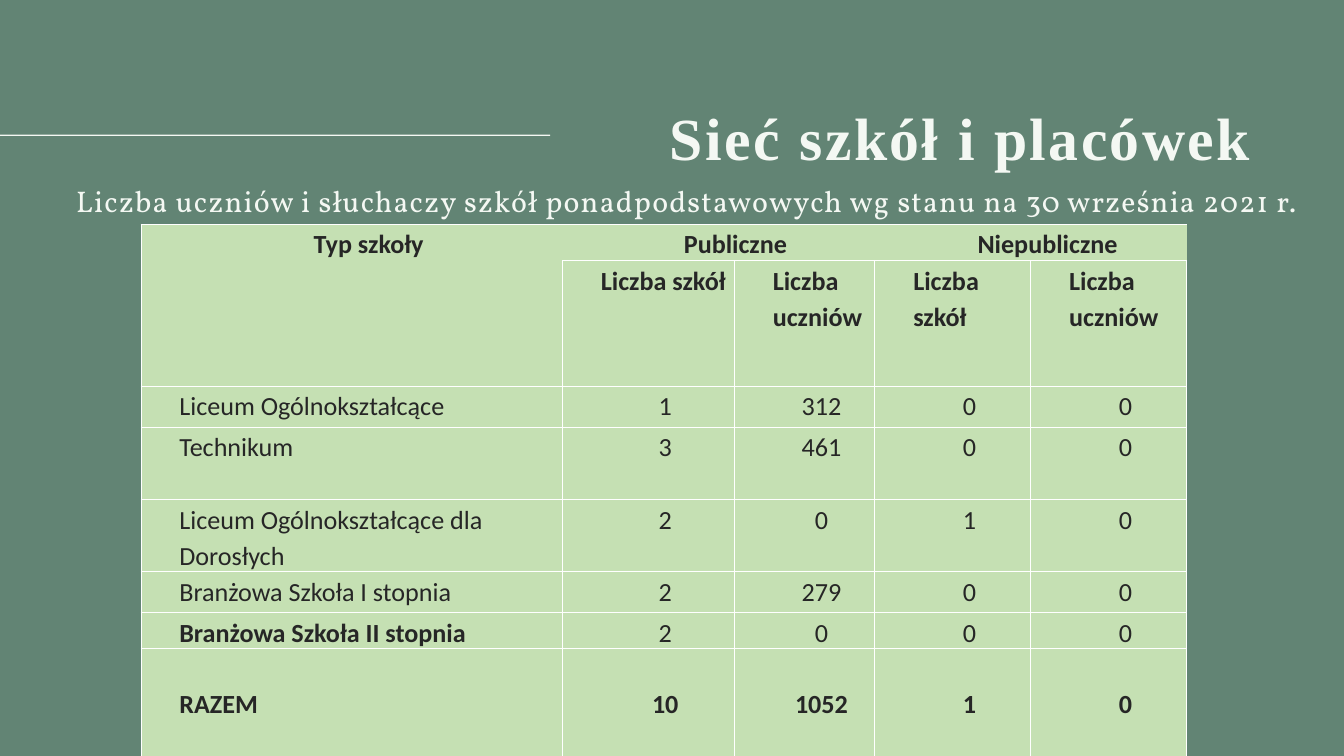
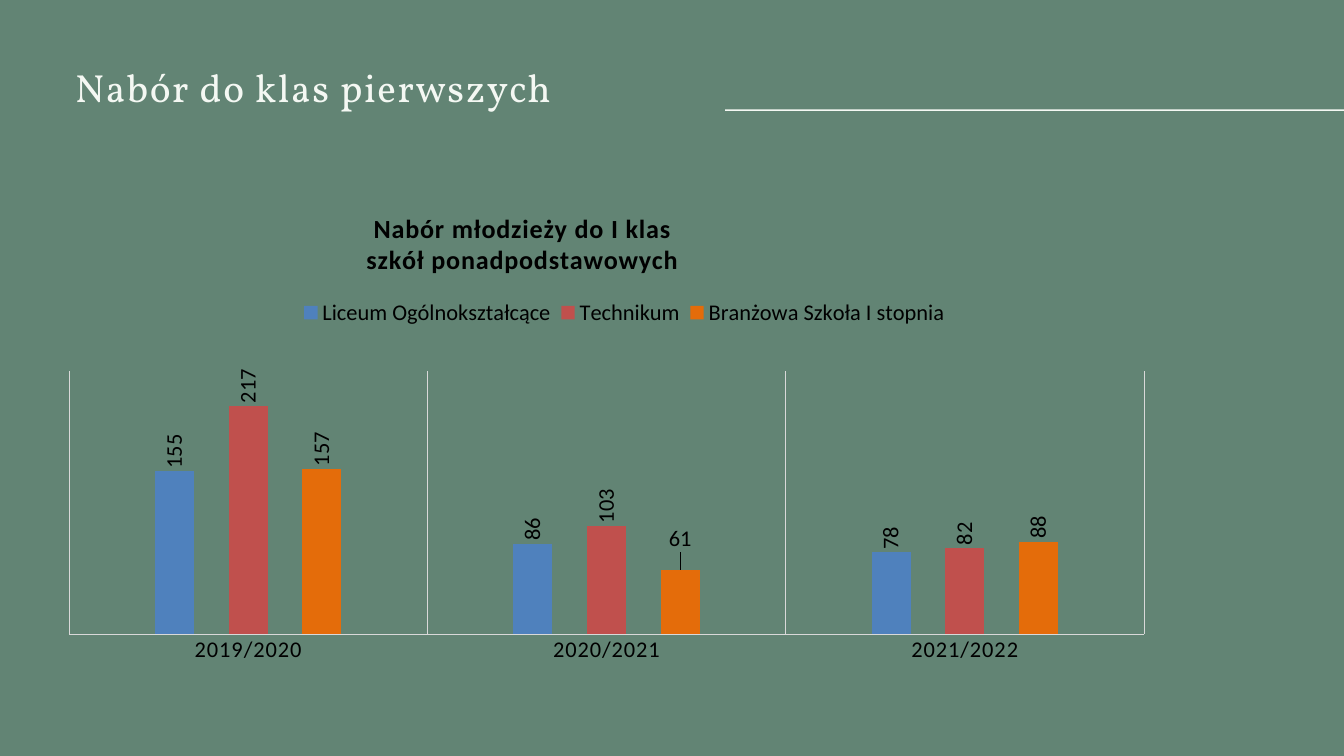
from lxml.etree import SubElement
from pptx import Presentation
from pptx.chart.data import CategoryChartData
from pptx.dml.color import RGBColor
from pptx.enum.chart import XL_CHART_TYPE, XL_LABEL_POSITION, XL_LEGEND_POSITION, XL_TICK_MARK
from pptx.enum.shapes import MSO_SHAPE
from pptx.enum.text import MSO_ANCHOR, MSO_AUTO_SIZE, PP_ALIGN
from pptx.oxml.ns import qn
from pptx.util import Cm, Pt

GREEN = RGBColor(0x62, 0x84, 0x74)
CREAM = RGBColor(0xF4, 0xF8, 0xF3)
LIME = RGBColor(0xC5, 0xE0, 0xB3)
INK = RGBColor(0x26, 0x26, 0x26)
WHITE = RGBColor(0xFF, 0xFF, 0xFF)
BLACK = RGBColor(0, 0, 0)
GREY = RGBColor(0xD9, 0xD9, 0xD9)
BLUE = RGBColor(0x4F, 0x81, 0xBD)
RED = RGBColor(0xC0, 0x50, 0x4D)
ORANGE = RGBColor(0xE4, 0x6C, 0x0A)

SERIF, SANS, ROMAN = "Vollkorn", "Calibri", "Times New Roman"
WIDTH, HEIGHT = 50.8, 28.58

HEADS = [
    ["Typ szkoły", "Publiczne", "", "Niepubliczne", ""],
    ["", "Liczba szkół", "Liczba uczniów", "Liczba szkół", "Liczba uczniów"],
]
SCHOOLS = [
    ["Liceum Ogólnokształcące", "1", "312", "0", "0"],
    ["Technikum", "3", "461", "0", "0"],
    ["Liceum Ogólnokształcące dla Dorosłych", "2", "0", "1", "0"],
    ["Branżowa Szkoła I stopnia", "2", "279", "0", "0"],
    ["Branżowa Szkoła II stopnia", "2", "0", "0", "0"],
    ["RAZEM", "10", "1052", "1", "0"],
]
COLS = [15.93, 6.5, 5.31, 5.89, 5.89]
ROWS = [1.22, 4.75, 1.55, 2.74, 2.51, 1.55, 1.22, 4.06]
SPANS = [((0, 0), (1, 0)), ((0, 1), (0, 2)), ((0, 3), (0, 4))]

YEARS = ["2019/2020", "2020/2021", "2021/2022"]
INTAKE = [
    ("Liceum Ogólnokształcące", (155, 86, 78), BLUE),
    ("Technikum", (217, 103, 82), RED),
    ("Branżowa Szkoła I stopnia", (157, 61, 88), ORANGE),
]


def write(frame, text, size, font=SANS, color=INK, bold=False, align=PP_ALIGN.LEFT,
          lead=None, track=0, indent=0):
    """Fill a text frame; lead is line spacing, track is letter spacing in points."""
    frame.text = text
    for para in frame.paragraphs:
        para.alignment = align
        if lead:
            para.line_spacing = lead
        if indent:
            props = para._p.get_or_add_pPr()
            props.set("marL", str(Cm(indent)))
            props.set("indent", "0")
        for run in para.runs:
            run.font.name = font
            run.font.size = Pt(size)
            run.font.bold = bold
            run.font.color.rgb = color
            if track:
                run._r.get_or_add_rPr().set("spc", str(round(track * 100)))


def edge(cell, lines):
    """Draw white borders on the named sides (L, R, T, B) and clear the others."""
    props = cell._tc.get_or_add_tcPr()
    for side in "LRTB":
        line = SubElement(props, qn(f"a:ln{side}"), w=str(Pt(1)))
        if side in lines:
            fill = SubElement(line, qn("a:solidFill"))
            SubElement(fill, qn("a:srgbClr"), val=str(WHITE))
        else:
            SubElement(line, qn("a:noFill"))


def place(node, index, fixed=True, inner=False, **spots):
    """Give a chart part a manual layout in fractions of the chart."""
    for old in node.findall(qn("c:layout")):
        node.remove(old)
    layout = node.makeelement(qn("c:layout"))
    node.insert(index, layout)
    manual = SubElement(layout, qn("c:manualLayout"))
    if inner:
        SubElement(manual, qn("c:layoutTarget"), val="inner")
    if fixed:
        for mode in ("xMode", "yMode"):
            SubElement(manual, qn(f"c:{mode}"), val="edge")
    for key, value in spots.items():
        SubElement(manual, qn(f"c:{key}"), val=str(value))


class Deck:
    def __init__(self):
        self.prs = Presentation()
        self.prs.slide_width, self.prs.slide_height = Cm(WIDTH), Cm(HEIGHT)
        back = self.prs.slide_master.background.fill
        back.solid()
        back.fore_color.rgb = GREEN
        self.slide = None

    def start(self):
        self.slide = self.prs.slides.add_slide(self.prs.slide_layouts[5])

    def fit(self, shape, box, right):
        shape.left, shape.top, shape.width, shape.height = map(Cm, box)
        frame = shape.text_frame
        frame.margin_left = frame.margin_top = frame.margin_bottom = 0
        frame.margin_right = Cm(right)
        frame.word_wrap = True
        frame.auto_size = MSO_AUTO_SIZE.SHAPE_TO_FIT_TEXT
        frame.vertical_anchor = MSO_ANCHOR.TOP
        return frame

    def title(self, text, box, size, right=0, **style):
        frame = self.fit(self.slide.shapes.title, box, right)
        write(frame, text, size, color=CREAM, lead=Pt(size * 1.2), **style)

    def label(self, text, box, size, right=0, **style):
        frame = self.fit(self.slide.shapes.add_textbox(*map(Cm, box)), box, right)
        write(frame, text, size, color=CREAM, lead=Pt(size * 1.2), **style)

    def rule(self, left, top, width):
        bar = self.slide.shapes.add_shape(
            MSO_SHAPE.RECTANGLE, Cm(left), Cm(top), Cm(width), Cm(0.05))
        bar.shadow.inherit = False
        bar.fill.solid()
        bar.fill.fore_color.rgb = CREAM
        bar.line.fill.background()

    def table(self, left, top):
        data = HEADS + SCHOOLS
        table = self.slide.shapes.add_table(
            len(data), len(COLS), Cm(left), Cm(top), Cm(sum(COLS)), Cm(sum(ROWS))).table
        table.first_row = table.horz_banding = False
        for col, width in zip(table.columns, COLS):
            col.width = Cm(width)
        for row, height in zip(table.rows, ROWS):
            row.height = Cm(height)
        last = len(data) - 1
        for r, texts in enumerate(data):
            for c, text in enumerate(texts):
                cell = table.cell(r, c)
                lines = "LRTB"
                if r == 0:
                    lines = "TB" + {0: "L", len(COLS) - 1: "R"}.get(c, "")
                edge(cell, lines)
                cell.fill.solid()
                cell.fill.fore_color.rgb = LIME
                cell.margin_left = cell.margin_right = Cm(0.18)
                cell.margin_top = cell.margin_bottom = 0
                cell.vertical_anchor = MSO_ANCHOR.MIDDLE if r == last else MSO_ANCHOR.TOP
                if text:
                    heavy = r < len(HEADS) or r == last or (r == last - 1 and c == 0)
                    mid = r == 0 or (r > 1 and c > 0)
                    write(cell.text_frame, text, 28, bold=heavy, lead=1.15, indent=1.27,
                          align=PP_ALIGN.CENTER if mid else PP_ALIGN.LEFT)
        for first, end in SPANS:
            table.cell(*first).merge(table.cell(*end))

    def chart(self, heading, box):
        data = CategoryChartData()
        data.categories = YEARS
        for name, values, _ in INTAKE:
            data.add_series(name, values)
        chart = self.slide.shapes.add_chart(
            XL_CHART_TYPE.COLUMN_CLUSTERED, *map(Cm, box), data).chart
        self.letter(chart.font)
        root = chart.element

        chart.has_title = True
        write(chart.chart_title.text_frame, heading, 28, color=BLACK, bold=True,
              align=PP_ALIGN.CENTER, track=1)
        place(root.find(".//" + qn("c:title")), 1, x=0.28, y=0.01)

        chart.has_legend = True
        chart.legend.position = XL_LEGEND_POSITION.TOP
        chart.legend.include_in_layout = False
        self.letter(chart.legend.font)
        place(root.find(".//" + qn("c:legend")), 1, x=0.22, y=0.19, w=0.56, h=0.06)
        place(root.find(".//" + qn("c:plotArea")), 0, inner=True,
              x=0.03, y=0.34, w=0.91, h=0.54)

        self.axes(chart)
        plot = chart.plots[0]
        plot.gap_width, plot.overlap, plot.vary_by_categories = 444, -90, False
        for series, (_, _, color) in zip(plot.series, INTAKE):
            series.format.fill.solid()
            series.format.fill.fore_color.rgb = color
            tags = series.data_labels
            tags.show_value = True
            tags.position = XL_LABEL_POSITION.OUTSIDE_END
            self.letter(tags.font)
            turn = root.findall(".//" + qn("c:dLbls") + "/" + qn("c:txPr"))[-1]
            body = turn.find(qn("a:bodyPr"))
            body.set("rot", "-5400000")
            body.set("vert", "horz")

        flat = plot.series[2].points[1].data_label
        write(flat.text_frame, "61", 24, color=BLACK, align=PP_ALIGN.CENTER)
        flat.position = XL_LABEL_POSITION.OUTSIDE_END
        node = root.find(".//" + qn("c:dLbl"))
        node.find(".//" + qn("a:bodyPr")).set("rot", "0")
        place(node, 1, fixed=False, x=0, y=-0.03)

    def axes(self, chart):
        years = chart.category_axis
        years.major_tick_mark = years.minor_tick_mark = XL_TICK_MARK.NONE
        years.has_major_gridlines = True
        for line in (years.format.line, years.major_gridlines.format.line):
            line.color.rgb = GREY
            line.width = Pt(0.75)
        self.letter(years.tick_labels.font)
        props = chart.element.find(".//" + qn("c:catAx")).find(".//" + qn("a:defRPr"))
        props.set("spc", "100")
        scale = chart.value_axis
        scale.has_major_gridlines = scale.visible = False
        scale.minimum_scale, scale.maximum_scale = 0, 250

    def letter(self, font):
        font.name, font.size, font.bold = SANS, Pt(24), False
        font.color.rgb = BLACK


def main():
    deck = Deck()

    deck.start()
    deck.title("Sieć szkół i placówek", (22.71, 3.81, 25.22, 2.67), 64, right=0.65,
               font=ROMAN, bold=True, align=PP_ALIGN.RIGHT, track=2.6)
    deck.rule(0, 5.09, 20.8)
    deck.label("Liczba uczniów i słuchaczy szkół ponadpodstawowych wg stanu na 30 września 2021 r.",
               (1.55, 6.91, 48.18, 1.35), 32, right=0.65,
               font=SERIF, align=PP_ALIGN.RIGHT, track=1.3)
    deck.table(5.33, 8.48)

    deck.start()
    deck.rule(27.41, 4.14, WIDTH - 27.41)
    deck.title("Nabór do klas pierwszych", (2.84, 2.39, 23.83, 1.78), 42,
               font=SERIF, track=1.7)
    deck.chart("Nabór młodzieży do I klas\nszkół ponadpodstawowych",
               (1.27, 7.77, 44.65, 18.42))

    deck.prs.save("out.pptx")


if __name__ == "__main__":
    main()
